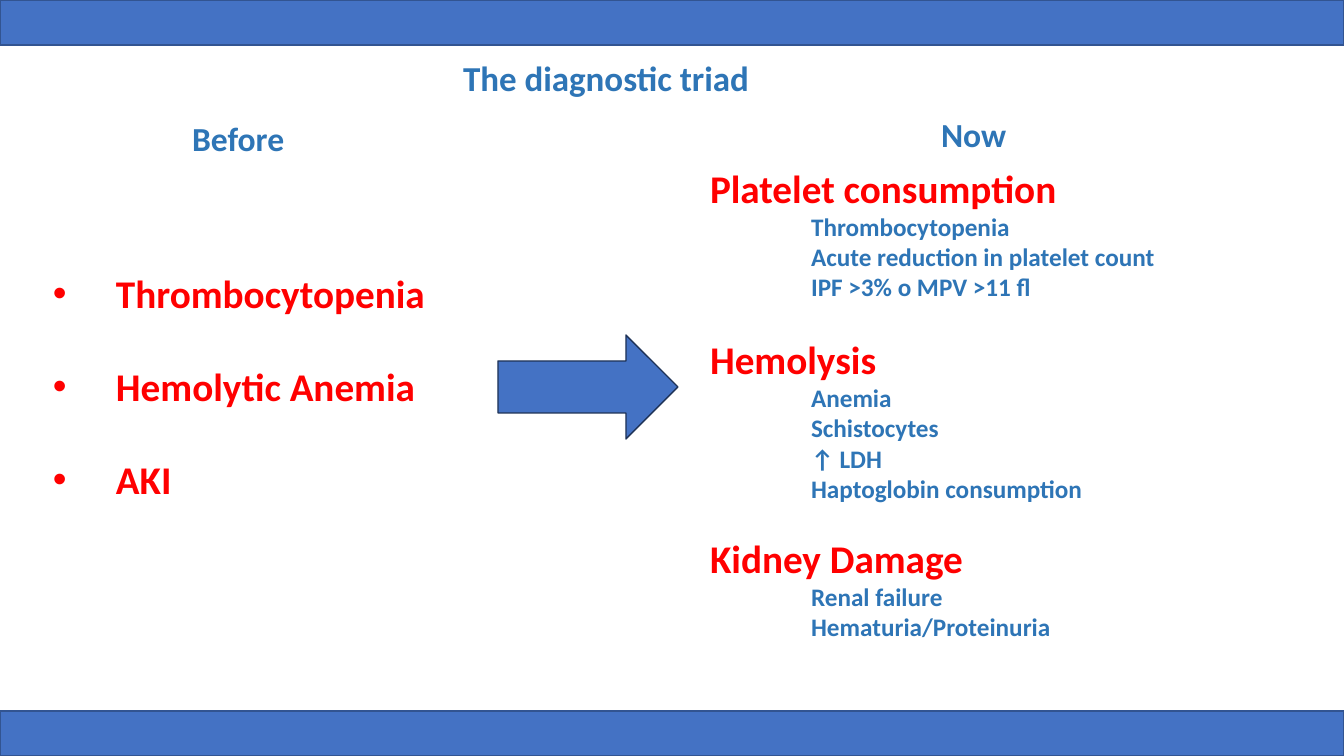
from lxml import etree
from pptx import Presentation
from pptx import util as u
from pptx.dml.color import RGBColor
from pptx.enum import shapes, text
from pptx.oxml import ns

PX = 914400 / 100.8  # EMU in one px
WIDE, HIGH, BAND = 1344, 756, 45

FILL = RGBColor(0x44, 0x72, 0xC4)
EDGE = RGBColor(0x32, 0x54, 0x91)
DARK = RGBColor(0x1E, 0x32, 0x56)
BLUE = RGBColor(0x2E, 0x75, 0xB6)
RED = RGBColor(0xFF, 0x00, 0x00)

SIGNS = ["Thrombocytopenia", "Hemolytic Anemia", "AKI"]
# Heading, space before it in points, findings
GROUPS = [
    ("Platelet consumption", 0,
     ["Thrombocytopenia", "Acute reduction in platelet count",
      "IPF >3% o MPV >11 fl"]),
    ("Hemolysis", 24,
     ["Anemia", "Schistocytes", "↑ LDH", "Haptoglobin consumption"]),
    ("Kidney Damage", 22, ["Renal failure", "Hematuria/Proteinuria"]),
]


def px(n):
    return u.Emu(round(n * PX))


def add_block(slide, kind, box, edge):
    block = slide.shapes.add_shape(kind, *map(px, box))
    block.shadow.inherit = False
    block.fill.solid()
    block.fill.fore_color.rgb = FILL
    block.line.color.rgb = edge
    block.line.width = u.Pt(1)


def set_frame(holder, box):
    holder.left, holder.top, holder.width, holder.height = map(px, box)
    frame = holder.text_frame
    frame.word_wrap = True
    frame.auto_size = text.MSO_AUTO_SIZE.NONE
    frame.vertical_anchor = text.MSO_ANCHOR.TOP
    return frame


def add_line(frame, words, size, color, gap=0, left=0, mark=None, level=0):
    """Fill the first empty paragraph, or add one."""
    para = frame.paragraphs[-1]
    if para.runs:
        para = frame.add_paragraph()
    para.level = level
    para.alignment = text.PP_ALIGN.LEFT
    para.line_spacing = 1.0
    para.space_before = u.Pt(gap)
    # Indent and bullet
    props = para._p.get_or_add_pPr()
    props.set("marL", str(px(left)))
    props.set("indent", str(-px(left) if mark else 0))
    if mark:
        font = etree.SubElement(props, ns.qn("a:buFont"))
        font.set("typeface", "Arial")
        etree.SubElement(props, ns.qn("a:buChar")).set("char", mark)
    else:
        etree.SubElement(props, ns.qn("a:buNone"))
    run = para.add_run()
    run.text = words
    run.font.name = "Calibri"
    run.font.size = u.Pt(size)
    run.font.bold = True
    run.font.color.rgb = color


def main():
    deck = Presentation()
    deck.slide_width, deck.slide_height = px(WIDE), px(HIGH)
    slide = deck.slides.add_slide(deck.slide_layouts.get_by_name("Comparison"))
    title, before, signs, now, triad = slide.placeholders

    # Bands and arrow
    for top in (0, HIGH - BAND):
        add_block(slide, shapes.MSO_SHAPE.RECTANGLE,
                  (0, top, WIDE, BAND), EDGE)
    add_block(slide, shapes.MSO_SHAPE.RIGHT_ARROW, (498, 335, 180, 104), DARK)

    # Title and column heads
    heads = [
        (title, "The diagnostic triad", 25, (453, 51, 504, 52)),
        (before, "Before", 24, (182, 113, 185, 52)),
        (now, "Now", 24, (931, 109, 185, 52)),
    ]
    for holder, words, size, box in heads:
        add_line(set_frame(holder, box), words, size, BLUE)

    # Left list
    frame = set_frame(signs, (46, 265, 434, 380))
    frame.margin_left = frame.margin_right = px(7)
    frame.margin_top = frame.margin_bottom = px(4)
    for i, sign in enumerate(SIGNS):
        add_line(frame, sign, 28, RED, gap=33 if i else 0, left=63, mark="•")

    # Right list
    frame = set_frame(triad, (700, 159, 640, 492))
    for head, gap, finds in GROUPS:
        add_line(frame, head, 28, RED, gap)
        for find in finds:
            add_line(frame, find, 18, BLUE, left=101, level=1)

    deck.save("out.pptx")


if __name__ == "__main__":
    main()
